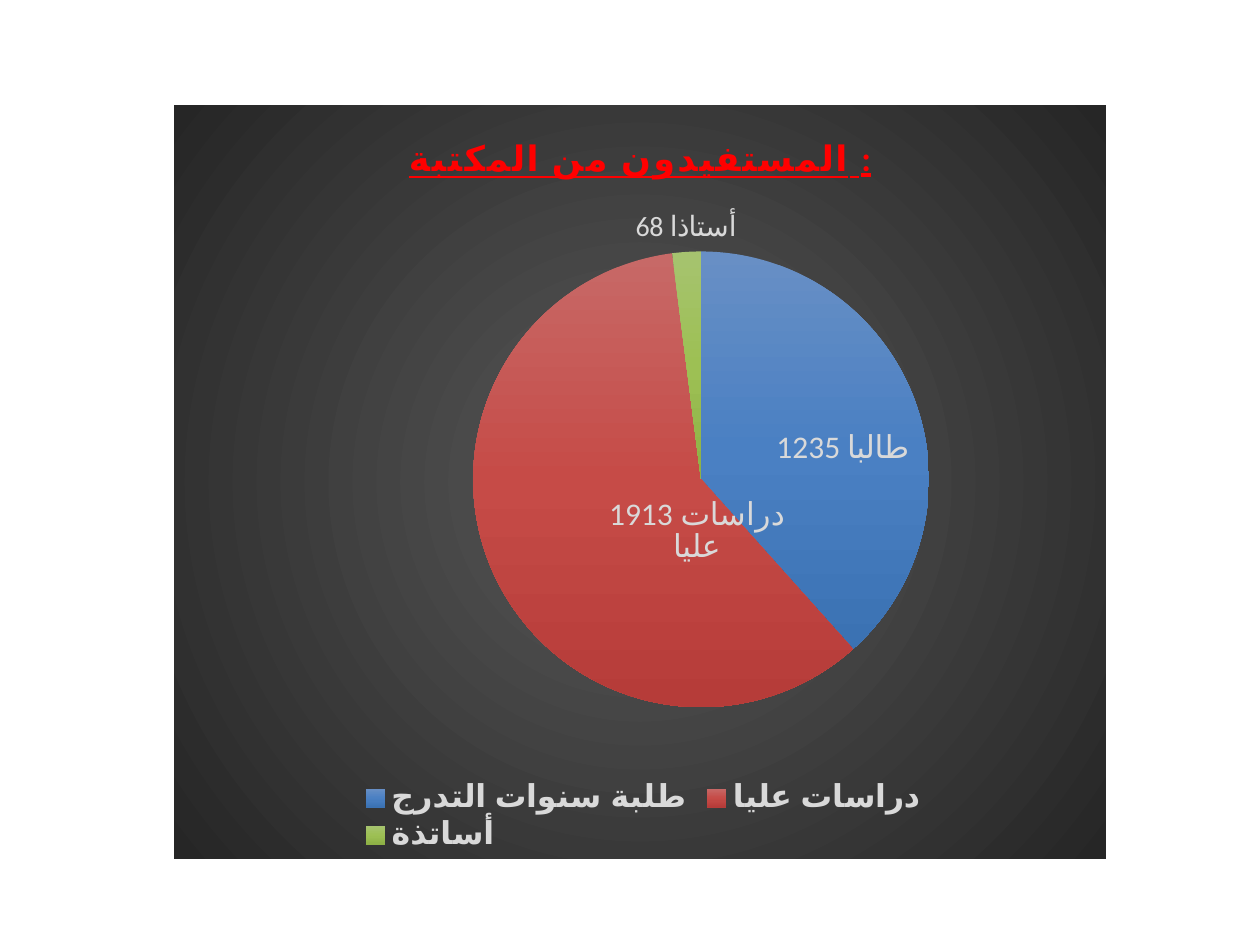
import pptx
import pptx.chart.data
import pptx.dml.color
import pptx.enum.chart
import pptx.oxml
import pptx.oxml.ns
import pptx.util

PX = 914400 / 126
CHART_W, CHART_H = 932, 754
NS = pptx.oxml.ns.nsdecls("a", "c")


def style(font, color, **values):
    font.color.rgb = pptx.dml.color.RGBColor.from_string(color)
    for name, value in values.items():
        setattr(font, name, value)


def layout(x, y, w=None, h=None, inner=False):
    """Manual layout from px within the chart."""
    xml = '<c:layoutTarget val="inner"/>' if inner else ""
    if w:
        xml += '<c:xMode val="edge"/><c:yMode val="edge"/>'
    for tag, value, full in (("x", x, CHART_W), ("y", y, CHART_H),
                             ("w", w, CHART_W), ("h", h, CHART_H)):
        if value is not None:
            xml += f'<c:{tag} val="{value / full:.3f}"/>'
    return pptx.oxml.parse_xml(
        f"<c:layout {NS}><c:manualLayout>{xml}</c:manualLayout></c:layout>")


prs = pptx.Presentation()
prs.slide_width, prs.slide_height = pptx.util.Inches(10), pptx.util.Inches(7.5)
s = prs.slides.add_slide(prs.slide_layouts[6])

# name, value, label, label size, label offset in px, gradient
groups = [
    ("طلبة سنوات التدرج", 38, "1235 طالبا", 18, (35, 9), ("688FC5", "4A80C3", "3B72B3")),
    ("دراسات عليا", 59, "1913 دراسات عليا", 18, (100, 3), ("C76967", "C64B47", "B63C39")),
    ("أساتذة", 2, "68 أستاذا", 16, None, ("A6C36F", "9DC054", "8DB045")),
]
data = pptx.chart.data.CategoryChartData()
data.categories = [g[0] for g in groups]
data.add_series("Series 1", [g[1] for g in groups])
box = [round(v * PX) for v in (174, 105, CHART_W, CHART_H)]
chart = s.shapes.add_chart(pptx.enum.chart.XL_CHART_TYPE.PIE, *box, data).chart
style(chart.font, "000000", name="Calibri", size=pptx.util.Pt(10))

# Title
tf = chart.chart_title.text_frame
r = tf.paragraphs[0].add_run()
r.text = "المستفيدون من المكتبة :"
style(r.font, "FF0000", size=pptx.util.Pt(20), bold=True, underline=True, name="Calibri")
r.font._element.set("spc", "100")
chart.chart_title.include_in_layout = False

# Legend
chart.has_legend = True
legend = chart.legend
legend.position = pptx.enum.chart.XL_LEGEND_POSITION.BOTTOM
legend.include_in_layout = False
style(legend.font, "D9D9D9", size=pptx.util.Pt(18), bold=True, name="Calibri")
legend._element.find(pptx.oxml.ns.qn("c:legendPos")).addnext(layout(182, 672, 575, 80))

# Pie area
plot = chart.plots[0]
plot.vary_by_categories = True
area = chart._chartSpace.chart.plotArea
for old in area.findall(pptx.oxml.ns.qn("c:layout")):
    area.remove(old)
area.insert(0, layout(299, 146, 456, 456, inner=True))

# Chart background
chart._chartSpace.chart.addnext(pptx.oxml.parse_xml(
    f'<c:spPr {NS}><a:gradFill><a:gsLst>'
    '<a:gs pos="0"><a:srgbClr val="595959"/></a:gs>'
    '<a:gs pos="100000"><a:srgbClr val="262626"/></a:gs></a:gsLst>'
    '<a:path path="circle"><a:fillToRect l="50000" t="50000" r="50000" b="50000"/></a:path>'
    '</a:gradFill><a:ln><a:noFill/></a:ln></c:spPr>'))

# Slices and their labels
position = pptx.enum.chart.XL_LABEL_POSITION
series = plot.series[0]
for i, (_, _, text, size, offset, colors) in enumerate(groups):
    point = series.points[i]
    point.format.line.fill.background()
    stops = "".join(f'<a:gs pos="{n * 50000}"><a:srgbClr val="{c}"/></a:gs>'
                    for n, c in enumerate(colors))
    series._element.get_or_add_dPt_for_point(i).get_or_add_spPr().insert(
        0, pptx.oxml.parse_xml(f'<a:gradFill {NS}><a:gsLst>{stops}</a:gsLst>'
                               '<a:lin ang="5400000" scaled="0"/></a:gradFill>'))
    label = point.data_label
    r = label.text_frame.paragraphs[0].add_run()
    r.text = text
    style(r.font, "D9D9D9", size=pptx.util.Pt(size), name="Calibri")
    label.position = position.CENTER if offset else position.OUTSIDE_END
    if offset:
        idx = label._dLbl.find(pptx.oxml.ns.qn("c:idx"))
        idx.addnext(layout(*offset))

prs.save("out.pptx")
